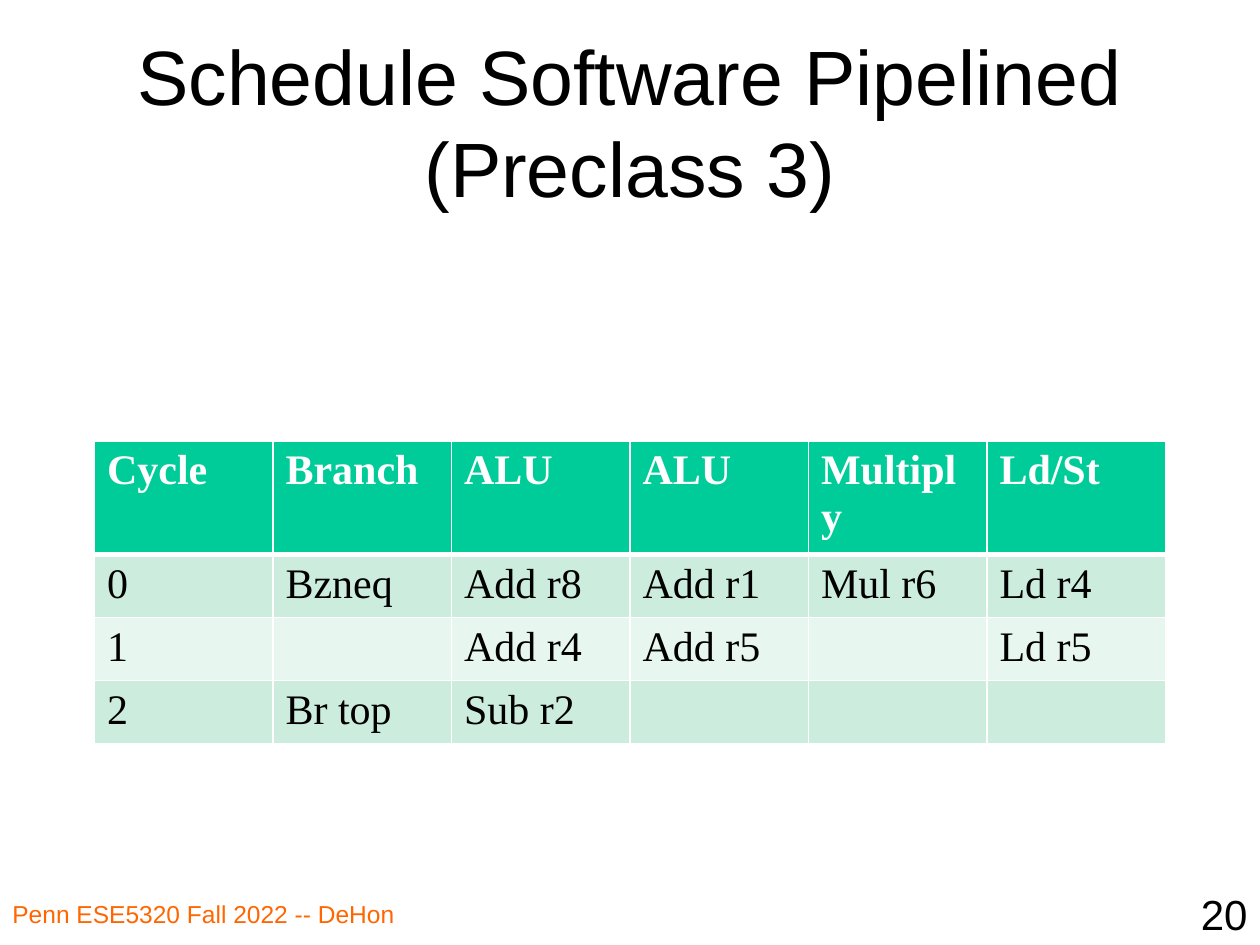
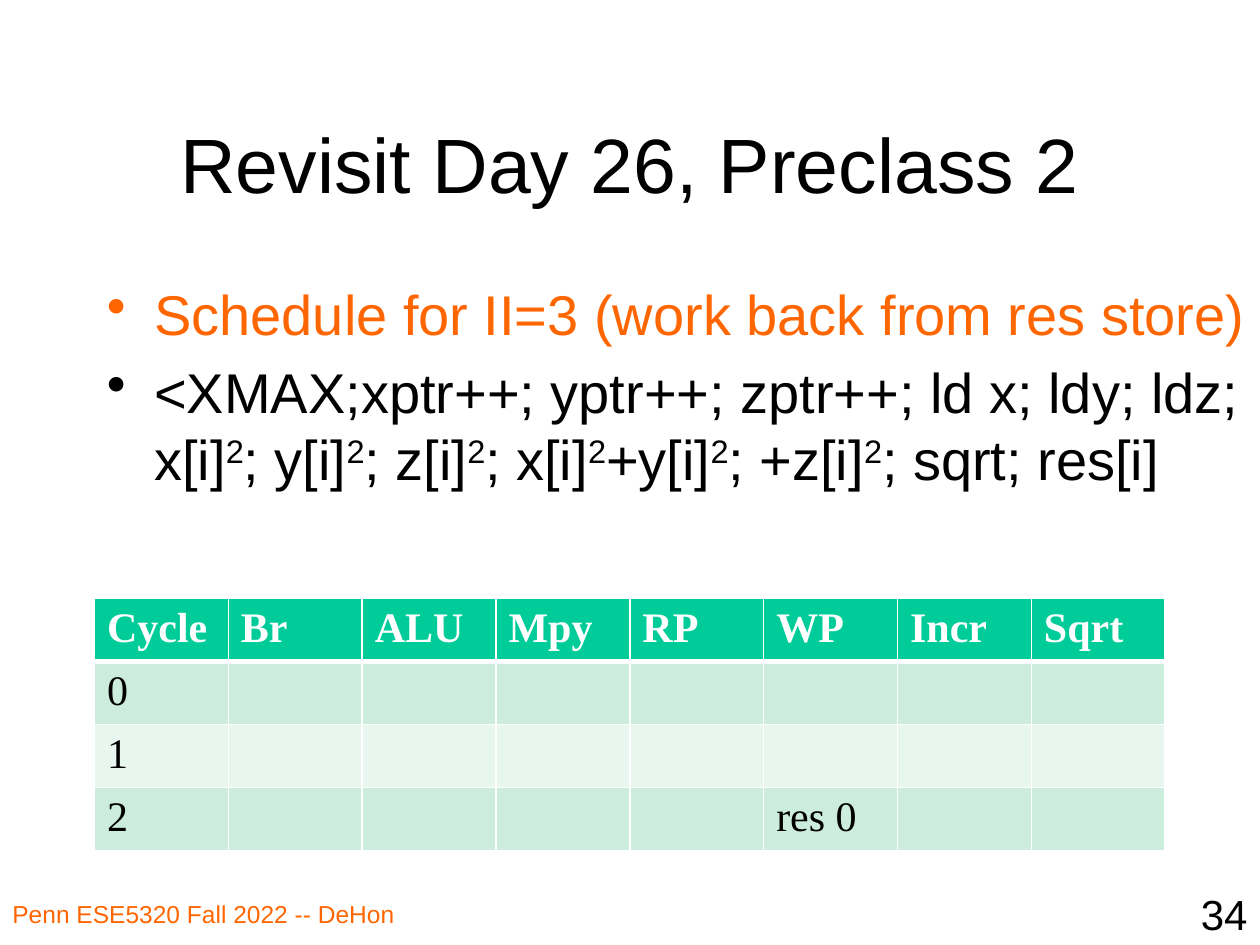
from dataclasses import dataclass

from lxml import etree
from pptx import Presentation
from pptx.dml.color import RGBColor
from pptx.enum import text as t
from pptx.oxml import ns
from pptx.util import Pt

BLACK = RGBColor(0x00, 0x00, 0x00)
WHITE = RGBColor(0xFF, 0xFF, 0xFF)
ORANGE = RGBColor(0xFF, 0x66, 0x00)
GREEN = RGBColor(0x00, 0xCC, 0x99)
MINT = RGBColor(0xCC, 0xEC, 0xDE)
PALE = RGBColor(0xE7, 0xF6, 0xEF)

SANS = "Arial"
SERIF = "Times New Roman"
LEFT, WIDE = 54, 612
ROW = 29.2
FOOTER = "Penn ESE5320 Fall 2022 -- DeHon"


@dataclass(frozen=True)
class Box:
    left: float
    top: float
    width: float
    height: float


@dataclass(frozen=True)
class Style:
    size: float
    color: RGBColor = BLACK
    font: str = SANS
    bold: bool = False
    align: t.PP_ALIGN = t.PP_ALIGN.LEFT


@dataclass(frozen=True)
class Page:
    title: str
    top: float
    number: int
    grid_top: float
    grid: list[list[str]]
    points: tuple[tuple[str, RGBColor], ...] = ()


TITLE = Style(44, align=t.PP_ALIGN.CENTER)
NOTE = Style(14, ORANGE)
NUMBER = Style(24, align=t.PP_ALIGN.RIGHT)
HEAD = Style(24, WHITE, SERIF, bold=True)
CELL = Style(24, font=SERIF)

PAGES = [
    Page("Schedule Software Pipelined\v(Preclass 3)", 24, 20, 252, [
        ["Cycle", "Branch", "ALU", "ALU", "Multiply", "Ld/St"],
        ["0", "Bzneq", "Add r8", "Add r1", "Mul r6", "Ld r4"],
        ["1", "", "Add r4", "Add r5", "", "Ld r5"],
        ["2", "Br top", "Sub r2", "", "", ""],
    ]),
    Page("Revisit Day 26, Preclass 2", 48, 34, 342, [
        ["Cycle", "Br", "ALU", "Mpy", "RP", "WP", "Incr", "Sqrt"],
        ["0"] + [""] * 7,
        ["1"] + [""] * 7,
        ["2", "", "", "", "", "res 0", "", ""],
    ], (
        ("Schedule for II=3 (work back from res store)", ORANGE),
        ("<XMAX;xptr++; yptr++; zptr++; ld x; ldy; ldz; x[i]²; y[i]²; z[i]²; "
         "x[i]²+y[i]²; +z[i]²; sqrt; res[i]", BLACK),
    )),
]


def format_runs(par, style: Style) -> None:
    par.alignment = style.align
    for run in par.runs:
        font = run.font
        font.name, font.size, font.bold = style.font, Pt(style.size), style.bold
        font.color.rgb = style.color


def add_frame(slide, box: Box, anchor=t.MSO_ANCHOR.TOP):
    sides = (box.left, box.top, box.width, box.height)
    frame = slide.shapes.add_textbox(*map(Pt, sides)).text_frame
    frame.word_wrap = True
    frame.vertical_anchor = anchor
    return frame


def add_text(slide, words: str, box: Box, style: Style,
             anchor=t.MSO_ANCHOR.TOP) -> None:
    frame = add_frame(slide, box, anchor)
    frame.text = words
    format_runs(frame.paragraphs[0], style)


def fill_point(par, words: str, color: RGBColor) -> None:
    """Write a bulleted paragraph, with each ² as a raised 2."""
    for i, part in enumerate(words.split("²")):
        if i:
            power = par.add_run()
            power.text = "2"
            power.font._element.set("baseline", "30000")
        par.add_run().text = part
    format_runs(par, Style(32, color))
    par.space_before = Pt(6.4)
    props = par._p.get_or_add_pPr()
    props.set("marL", str(Pt(27)))
    props.set("indent", str(-Pt(27)))
    etree.SubElement(props, ns.qn("a:buChar")).set("char", "•")


def add_points(slide, points: tuple[tuple[str, RGBColor], ...]) -> None:
    frame = add_frame(slide, Box(LEFT, 156, 666, 324))
    for i, (words, color) in enumerate(points):
        par = frame.add_paragraph() if i else frame.paragraphs[0]
        fill_point(par, words, color)


def set_edges(cell, head: bool, below: bool) -> None:
    """Draw white edges, thick between the head and the row below it."""
    widths = {"L": 1, "R": 1, "T": 3 if below else 1, "B": 3 if head else 1}
    props = cell._tc.get_or_add_tcPr()
    for i, (side, width) in enumerate(widths.items()):
        line = etree.Element(ns.qn(f"a:ln{side}"), w=str(Pt(width)))
        fill = etree.SubElement(line, ns.qn("a:solidFill"))
        etree.SubElement(fill, ns.qn("a:srgbClr")).set("val", str(WHITE))
        props.insert(i, line)


def add_grid(slide, rows: list[list[str]], top: float) -> None:
    count = len(rows[0])
    table = slide.shapes.add_table(
        len(rows), count, Pt(LEFT), Pt(top), Pt(WIDE), Pt(ROW * len(rows))).table
    for col in table.columns:
        col.width = Pt(WIDE / count)
    for r, row in enumerate(rows):
        for c, words in enumerate(row):
            cell = table.cell(r, c)
            cell.text = words
            format_runs(cell.text_frame.paragraphs[0], CELL if r else HEAD)
            cell.fill.solid()
            cell.fill.fore_color.rgb = (MINT if r % 2 else PALE) if r else GREEN
            set_edges(cell, r == 0, r == 1)


def add_page(deck, page: Page) -> None:
    slide = deck.slides.add_slide(deck.slide_layouts[6])
    add_text(slide, page.title, Box(LEFT, page.top, WIDE, 90), TITLE,
             t.MSO_ANCHOR.MIDDLE)
    if page.points:
        add_points(slide, page.points)
    add_text(slide, FOOTER, Box(0, 510, 276, 30), NOTE)
    add_text(slide, str(page.number), Box(570, 504, 150, 36), NUMBER)
    add_grid(slide, page.grid, page.grid_top)


def main() -> None:
    deck = Presentation()
    deck.slide_width, deck.slide_height = Pt(720), Pt(540)
    for page in PAGES:
        add_page(deck, page)
    deck.save("out.pptx")


if __name__ == "__main__":
    main()
